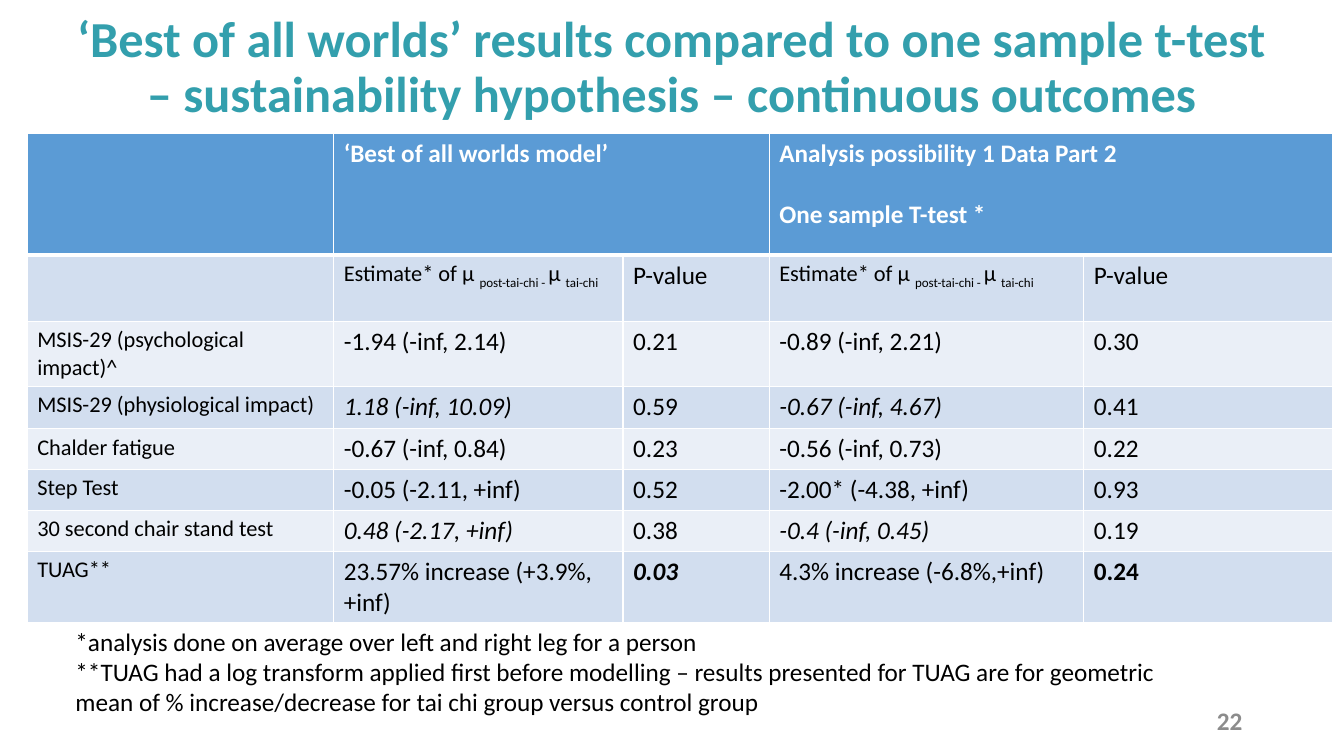
from dataclasses import dataclass

from lxml.etree import SubElement
from pptx import Presentation
from pptx.dml.color import RGBColor
from pptx.enum.text import MSO_ANCHOR, MSO_AUTO_SIZE, PP_ALIGN
from pptx.oxml.ns import qn
from pptx.util import Inches, Pt


@dataclass(frozen=True)
class Theme:
    font: str = "Calibri"
    title_color: str = "339FAD"
    header_fill: str = "5B9BD5"
    dark_band: str = "D2DEEF"
    light_band: str = "EAEFF7"
    white: str = "FFFFFF"
    black: str = "000000"
    grey: str = "8C8C8C"
    title_size: int = 36
    body_size: int = 18
    label_size: int = 16


THEME = Theme()

COLUMN_WIDTHS = [3.04, 2.87, 1.45, 3.12, 2.47]
ROW_HEIGHTS = [1.21, 0.66, 0.59, 0.42, 0.37, 0.37, 0.37, 0.37]
HEADERS = {
    1: "‘Best of all worlds model’",
    3: "Analysis possibility 1 Data Part 2\nOne sample T-test *",
}
ESTIMATE_PARTS = ["Estimate* of µ ", "post-tai-chi - ", "µ ", "tai-chi"]
OUTCOMES = [
    ["MSIS-29 (psychological impact)^", "-1.94 (-inf, 2.14)", "0.21", "-0.89 (-inf, 2.21)", "0.30"],
    ["MSIS-29 (physiological impact)", "1.18 (-inf, 10.09)", "0.59", "-0.67 (-inf, 4.67)", "0.41"],
    ["Chalder fatigue", "-0.67 (-inf, 0.84)", "0.23", "-0.56 (-inf, 0.73)", "0.22"],
    ["Step Test", "-0.05 (-2.11, +inf)", "0.52", "-2.00* (-4.38, +inf)", "0.93"],
    ["30 second chair stand test", "0.48 (-2.17, +inf)", "0.38", "-0.4 (-inf, 0.45)", "0.19"],
    ["TUAG**", "23.57% increase (+3.9%, +inf)", "0.03", "4.3% increase (-6.8%,+inf)", "0.24"],
]
ITALIC_VALUES = {"1.18 (-inf, 10.09)", "-0.67 (-inf, 4.67)", "0.48 (-2.17, +inf)", "-0.4 (-inf, 0.45)", "0.03"}
BOLD_VALUES = {"0.03", "0.24"}
FOOTNOTES = (
    "*analysis done on average over left and right leg for a person\n"
    "**TUAG had a log transform applied first before modelling – results presented for TUAG "
    "are for geometric mean of % increase/decrease for tai chi group versus control group"
)


def format_text(text_frame, size, color, bold=False, italic=False):
    for paragraph in text_frame.paragraphs:
        for run in paragraph.runs:
            font = run.font
            font.name = THEME.font
            font.size = Pt(size)
            font.bold = bold
            font.italic = italic
            font.color.rgb = RGBColor.from_string(color)


def add_text(slide, box, text, size, color, bold=False, align=PP_ALIGN.LEFT, anchor=MSO_ANCHOR.TOP):
    shape = slide.shapes.add_textbox(*(Inches(length) for length in box))
    text_frame = shape.text_frame
    text_frame.word_wrap = True
    text_frame.vertical_anchor = anchor
    text_frame.text = text
    for paragraph in text_frame.paragraphs:
        paragraph.alignment = align
    format_text(text_frame, size, color, bold)
    return shape


def style_cell(cell, fill, bottom_width=1):
    """Give the cell white borders, then its fill."""
    properties = cell._tc.get_or_add_tcPr()
    for side, width in {"L": 1, "R": 1, "T": 1, "B": bottom_width}.items():
        line = SubElement(properties, qn(f"a:ln{side}"), w=str(Pt(width)))
        solid = SubElement(line, qn("a:solidFill"))
        SubElement(solid, qn("a:srgbClr"), val=THEME.white)
    cell.fill.solid()
    cell.fill.fore_color.rgb = RGBColor.from_string(fill)


def write_cell(cell, text, size=THEME.body_size, color=THEME.black, bold=False, italic=False):
    cell.text_frame.text = text
    format_text(cell.text_frame, size, color, bold, italic)


def write_estimate(cell):
    """Write the estimate heading; every second part is a subscript."""
    paragraph = cell.text_frame.paragraphs[0]
    for index, part in enumerate(ESTIMATE_PARTS):
        run = paragraph.add_run()
        run.text = part
        if index % 2:
            run._r.get_or_add_rPr().set("baseline", "-25000")
    format_text(cell.text_frame, THEME.label_size, THEME.black)


def fill_headers(table):
    for column, text in HEADERS.items():
        header = table.cell(0, column)
        header.merge(table.cell(0, column + 1))
        write_cell(header, text, color=THEME.white, bold=True)
        for paragraph in header.text_frame.paragraphs[1:]:
            paragraph.space_before = Pt(22)
        write_estimate(table.cell(1, column))
        write_cell(table.cell(1, column + 1), "P-value")


def fill_outcomes(table):
    for row, values in enumerate(OUTCOMES, start=2):
        for column, value in enumerate(values):
            size = THEME.body_size if column else THEME.label_size
            write_cell(table.cell(row, column), value, size,
                       bold=value in BOLD_VALUES, italic=value in ITALIC_VALUES)


def add_results_table(slide):
    frame = slide.shapes.add_table(
        len(ROW_HEIGHTS), len(COLUMN_WIDTHS),
        Inches(0.27), Inches(1.32), Inches(12.95), Inches(4.83))
    table = frame.table
    for column, width in zip(table.columns, COLUMN_WIDTHS):
        column.width = Inches(width)
    for index, (row, height) in enumerate(zip(table.rows, ROW_HEIGHTS)):
        row.height = Inches(height)
        band = THEME.dark_band if index % 2 else THEME.light_band
        for cell in row.cells:
            if index == 0:
                style_cell(cell, THEME.header_fill, bottom_width=3)
            else:
                style_cell(cell, band)
    fill_headers(table)
    fill_outcomes(table)


def main():
    presentation = Presentation()
    presentation.slide_width = Inches(13.33)
    presentation.slide_height = Inches(7.5)
    slide = presentation.slides.add_slide(presentation.slide_layouts[6])

    add_results_table(slide)
    title = add_text(
        slide, (0, 0.08, 13.33, 1.2),
        "‘Best of all worlds’ results compared to one sample t-test\v"
        "– sustainability hypothesis – continuous outcomes",
        THEME.title_size, THEME.title_color, bold=True,
        align=PP_ALIGN.CENTER, anchor=MSO_ANCHOR.MIDDLE)
    title.text_frame.paragraphs[0].line_spacing = 0.9
    footnotes = add_text(slide, (0.65, 6.16, 11.06, 1.31), FOOTNOTES, THEME.body_size, THEME.black)
    footnotes.text_frame.auto_size = MSO_AUTO_SIZE.SHAPE_TO_FIT_TEXT
    add_text(slide, (9.42, 6.95, 3, 0.4), "22", THEME.body_size, THEME.grey, bold=True,
             align=PP_ALIGN.RIGHT, anchor=MSO_ANCHOR.MIDDLE)

    presentation.save("out.pptx")


if __name__ == "__main__":
    main()
